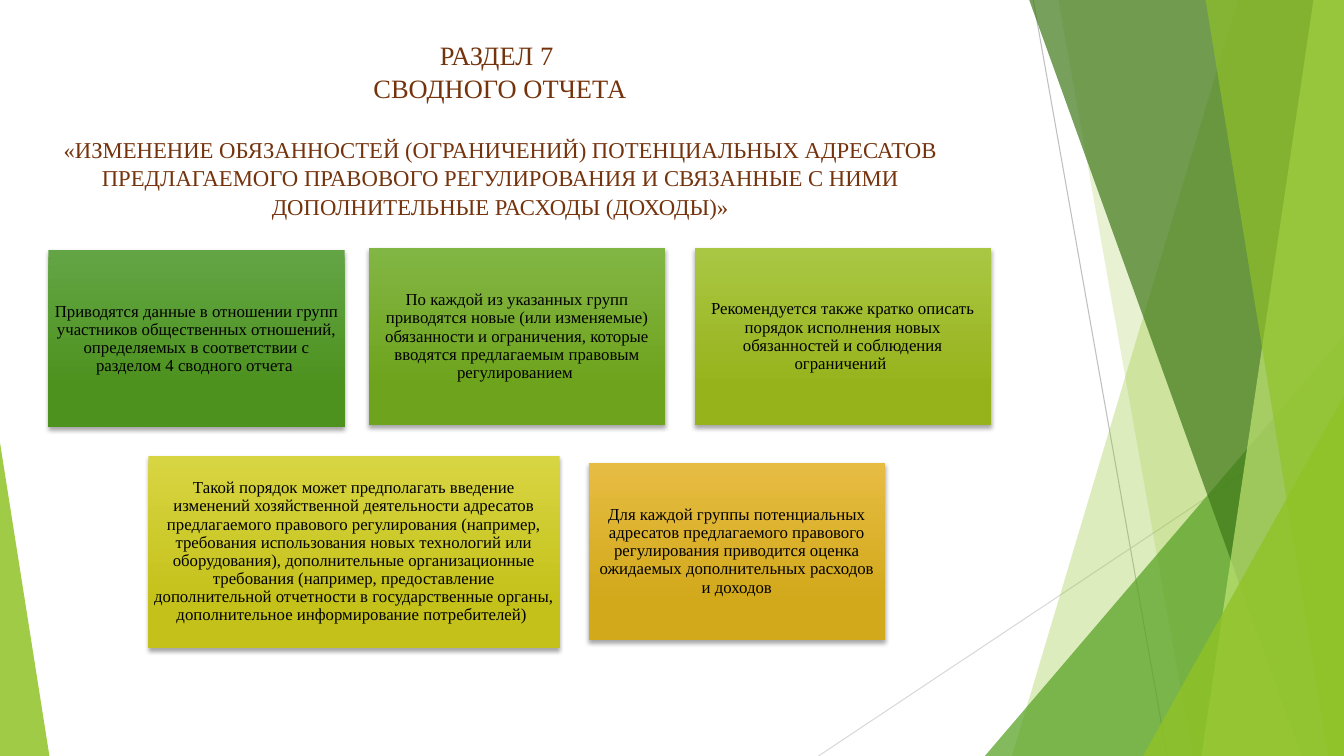
from lxml.etree import SubElement
from pptx import Presentation
from pptx.dml.color import RGBColor
from pptx.enum.shapes import MSO_CONNECTOR, MSO_SHAPE
from pptx.enum.text import MSO_ANCHOR, MSO_AUTO_SIZE, PP_ALIGN
from pptx.oxml.ns import qn
from pptx.util import Inches, Pt

WIDTH, HEIGHT = Inches(13.33), Inches(7.5)
FONT = "Times New Roman"
BLACK = RGBColor(0x00, 0x00, 0x00)
BROWN = RGBColor(0x74, 0x33, 0x0C)
GRAY = RGBColor(0xBF, 0xBF, 0xBF)
LIGHT_GRAY = RGBColor(0xD9, 0xD9, 0xD9)
LIME = RGBColor(0x90, 0xC2, 0x26)
PALE_LIME = RGBColor(0xC0, 0xE4, 0x74)
GREEN = RGBColor(0x54, 0xA0, 0x21)
DARK_GREEN = RGBColor(0x3F, 0x78, 0x19)
LEAF_TOP, LEAF_END = RGBColor(0x63, 0xA5, 0x45), RGBColor(0x4D, 0x92, 0x1E)
GRASS_TOP, GRASS_END = RGBColor(0x82, 0xB6, 0x44), RGBColor(0x6E, 0xA3, 0x1D)
OLIVE_TOP, OLIVE_END = RGBColor(0xAA, 0xC7, 0x44), RGBColor(0x97, 0xB3, 0x1C)
YELLOW_TOP, YELLOW_END = RGBColor(0xD8, 0xD5, 0x43), RGBColor(0xC4, 0xC1, 0x1A)
AMBER_TOP, AMBER_END = RGBColor(0xE7, 0xBC, 0x43), RGBColor(0xD2, 0xA9, 0x1B)

RAYS = [
    (76.88, 0, 86.85, 100, GRAY),
    (100, 53.73, 60.9, 100, LIGHT_GRAY),
]
BACK_BANDS = [
    (92.1, 75.3, LIME, 30),
    (78.75, 88.73, LIME, 20),
]
FRONT_BANDS = [
    (76.58, 96.83, DARK_GREEN, 70),
    (97.73, 89.4, PALE_LIME, 70),
    (89.7, 98.85, LIME, 65),
]
TITLE = [
    ("РАЗДЕЛ 7 ", 18.9, 0),
    ("СВОДНОГО ОТЧЕТА", 18.9, 0),
    ("«ИЗМЕНЕНИЕ ОБЯЗАННОСТЕЙ (ОГРАНИЧЕНИЙ) ПОТЕНЦИАЛЬНЫХ АДРЕСАТОВ "
     "ПРЕДЛАГАЕМОГО ПРАВОВОГО РЕГУЛИРОВАНИЯ И СВЯЗАННЫЕ С НИМИ "
     "ДОПОЛНИТЕЛЬНЫЕ РАСХОДЫ (ДОХОДЫ)»", 16.2, 22.5),
]
CARD = (22.05, 23.47)
WIDE_CARD = (30.6, 25.47)
CARDS = [
    (3.6, 33.07, CARD, LEAF_TOP, LEAF_END,
     "Приводятся данные в отношении групп участников общественных отношений, "
     "определяемых в соответствии с разделом 4 сводного отчета "),
    (27.45, 32.8, CARD, GRASS_TOP, GRASS_END,
     "По каждой из указанных групп приводятся новые (или изменяемые) "
     "обязанности и ограничения, которые вводятся предлагаемым правовым "
     "регулированием "),
    (51.68, 32.8, CARD, OLIVE_TOP, OLIVE_END,
     "Рекомендуется также кратко описать порядок исполнения новых "
     "обязанностей и соблюдения ограничений "),
    (11.03, 60.27, WIDE_CARD, YELLOW_TOP, YELLOW_END,
     "Такой порядок может предполагать введение изменений хозяйственной "
     "деятельности адресатов предлагаемого правового регулирования (например, "
     "требования использования новых технологий или оборудования), "
     "дополнительные организационные требования (например, предоставление "
     "дополнительной отчетности в государственные органы, дополнительное "
     "информирование потребителей) "),
    (43.8, 61.2, CARD, AMBER_TOP, AMBER_END,
     "Для каждой группы потенциальных адресатов предлагаемого правового "
     "регулирования приводится оценка ожидаемых дополнительных расходов и "
     "доходов"),
]


class Deck:
    """Slide builder that takes lengths as percentages of the slide's size."""

    def __init__(self):
        """Open a title-only slide."""
        self.prs = Presentation()
        self.prs.slide_width, self.prs.slide_height = WIDTH, HEIGHT
        self.s = self.prs.slides.add_slide(self.prs.slide_layouts[5])

    def at(self, *shares):
        """Turn alternating x and y percentages into lengths."""
        return [round(v * (HEIGHT if i % 2 else WIDTH) / 100)
                for i, v in enumerate(shares)]

    def style(self, p, size, color):
        """Centre a paragraph and format its runs."""
        p.alignment = PP_ALIGN.CENTER
        for r in p.runs:
            r.font.name, r.font.size = FONT, Pt(size)
            r.font.color.rgb = color

    def paint(self, sp, color, opacity):
        """Give a shape a flat translucent fill without line or shadow."""
        sp.shadow.inherit = False
        sp.line.fill.background()
        sp.fill.solid()
        sp.fill.fore_color.rgb = color
        clr = sp.fill._xPr.find(qn("a:solidFill"))[0]
        SubElement(clr, qn("a:alpha"), val=str(opacity * 1000))

    def ray(self, x1, y1, x2, y2, color):
        """Draw a thin straight line."""
        cx = self.s.shapes.add_connector(
            MSO_CONNECTOR.STRAIGHT, *self.at(x1, y1, x2, y2))
        cx.line.color.rgb, cx.line.width = color, Pt(0.75)
        SubElement(cx._element.spPr, qn("a:effectLst"))

    def band(self, top, bottom, color, opacity):
        """Fill the area from a slanted edge to the slide's right side."""
        fb = self.s.shapes.build_freeform(*self.at(top, 0))
        corners = [(100, 0), (100, 100), (bottom, 100)]
        fb.add_line_segments([self.at(*c) for c in corners], close=True)
        self.paint(fb.convert_to_shape(), color, opacity)

    def wedge(self, x, y, w, apex, color, opacity):
        """Draw a right triangle that stands on the slide's bottom edge."""
        sp = self.s.shapes.add_shape(
            MSO_SHAPE.ISOSCELES_TRIANGLE, *self.at(x, y, w, 100 - y))
        sp.adjustments[0] = apex
        self.paint(sp, color, opacity)

    def title(self, x, y, w, h, lines):
        """Place the title and fill it with lines of text, size and gap."""
        sp = self.s.shapes.title
        sp.left, sp.top, sp.width, sp.height = self.at(x, y, w, h)
        tf = sp.text_frame
        tf.word_wrap, tf.auto_size = True, MSO_AUTO_SIZE.NONE
        tf.vertical_anchor = MSO_ANCHOR.TOP
        tf.text = "\n".join(text for text, _, _ in lines)
        for p, (_, size, gap) in zip(tf.paragraphs, lines):
            p.space_before, p.line_spacing = Pt(gap), 1.04
            self.style(p, size, BROWN)

    def card(self, x, y, size, top, end, text):
        """Draw a shaded box with centred text and a soft shadow."""
        sp = self.s.shapes.add_shape(
            MSO_SHAPE.RECTANGLE, *self.at(x, y, *size))
        sp.line.fill.background()
        sp.fill.gradient()
        sp.fill.gradient_angle = 270
        for stop, place, color in zip(
                sp.fill.gradient_stops, (0, 0.78), (top, end)):
            stop.position, stop.color.rgb = place, color
        sp.shadow.inherit = False
        effects = sp._element.spPr.find(qn("a:effectLst"))
        shadow = SubElement(
            effects, qn("a:outerShdw"), blurRad=str(Pt(3)), dist=str(Pt(2)),
            dir="5400000", rotWithShape="0")
        clr = SubElement(shadow, qn("a:srgbClr"), val=str(BLACK))
        SubElement(clr, qn("a:alpha"), val="35000")
        tf = sp.text_frame
        tf.word_wrap, tf.vertical_anchor = True, MSO_ANCHOR.MIDDLE
        tf.margin_left = tf.margin_right = Inches(0.05)
        tf.margin_top = tf.margin_bottom = Inches(0.05)
        tf.text = text
        p = tf.paragraphs[0]
        p.line_spacing, p.space_after = 0.9, Pt(4.2)
        self.style(p, 12, BLACK)


def main():
    """Build the slide and save it."""
    deck = Deck()
    for ray in RAYS:
        deck.ray(*ray)
    for band in BACK_BANDS:
        deck.band(*band)
    deck.wedge(73.28, 44.4, 26.72, 1, GREEN, 72)
    for band in FRONT_BANDS:
        deck.band(*band)
    deck.wedge(85.05, 52.4, 14.95, 1, LIME, 80)
    deck.wedge(0, 58.53, 3.68, 0, LIME, 85)
    deck.title(1.95, 4.27, 70.5, 19.2, TITLE)
    for card in CARDS:
        deck.card(*card)
    deck.prs.save("out.pptx")


if __name__ == "__main__":
    main()
